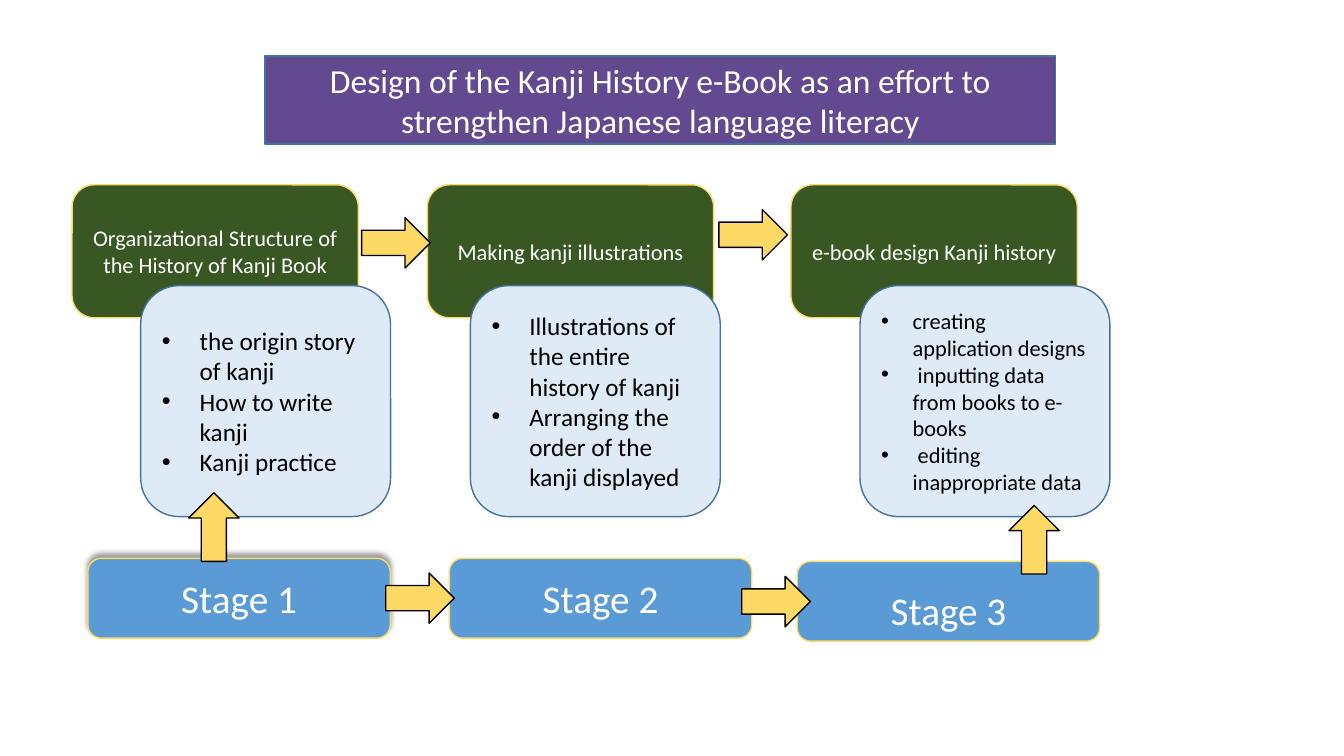
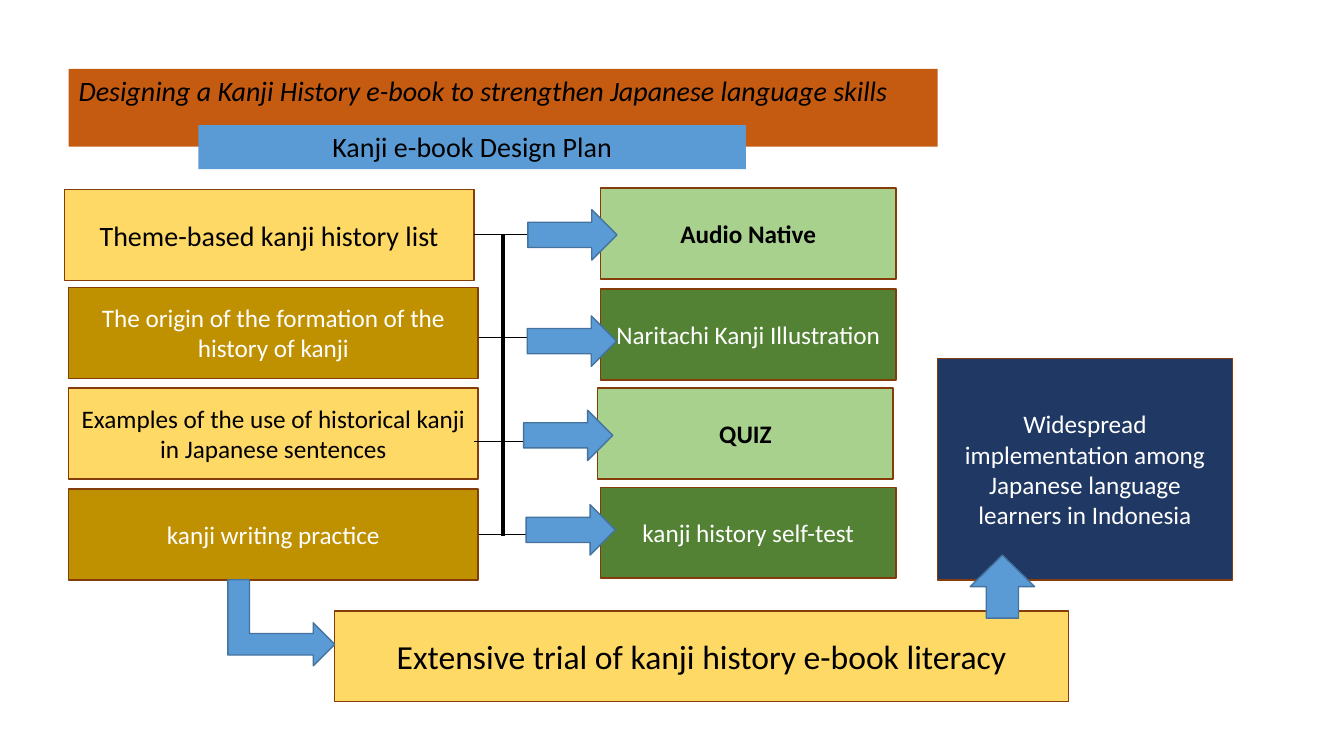
from dataclasses import dataclass
from lxml.etree import SubElement as Sub
from pptx import Presentation as Deck
from pptx.dml.color import RGBColor as RGB
from pptx.enum.shapes import MSO_CONNECTOR as Link, MSO_SHAPE as Form
from pptx.enum.text import MSO_ANCHOR as Anchor, PP_ALIGN as Align
from pptx.oxml.ns import qn
from pptx.util import Pt


@dataclass(frozen=True)
class Theme:
    font: str = "Calibri"
    # Colours
    black: str = "000000"
    white: str = "FFFFFF"
    purple: str = "634A90"
    forest: str = "385723"
    pale: str = "DEEBF7"
    blue: str = "5B9BD5"
    edge: str = "43739E"
    gold: str = "FFD966"
    amber: str = "BF9000"
    rust: str = "C55A11"
    brown: str = "843C0B"
    light: str = "A9D18E"
    green: str = "548235"
    navy: str = "203864"
    # Type sizes
    small: int = 16
    body: int = 18
    lead: int = 20
    title: int = 24
    stage: int = 28
    # Line widths
    hair: float = 0.5
    thin: float = 1
    thick: float = 3.25


T = Theme()


class Board:
    """Holds the deck, its style and the current slide."""

    def __init__(self):
        self.deck = Deck()
        self.deck.slide_width, self.deck.slide_height = Pt(960), Pt(540)
        self.slide = None

    def new(self):
        self.slide = self.deck.slides.add_slide(self.deck.slide_layouts[6])

    def shape(self, form, spot, fill, edge=None):
        item = self.slide.shapes.add_shape(form, *map(Pt, spot))
        item.shadow.inherit = False
        item.fill.solid()
        item.fill.fore_color.rgb = RGB.from_string(fill)
        if edge:
            item.line.color.rgb = RGB.from_string(edge)
            item.line.width = Pt(T.thin)
        else:
            item.line.fill.background()
        return item

    def text(self, para, words, size, tint, bold=False, slant=False):
        run = para.add_run()
        run.text = words
        font = run.font
        font.name, font.size = T.font, Pt(size)
        font.bold, font.italic = bold, slant
        font.color.rgb = RGB.from_string(tint)

    def box(self, spot, words, fill, edge=None, size=T.body, tint=T.white,
            form=Form.RECTANGLE, anchor=Anchor.MIDDLE, align=Align.CENTER, **look):
        item = self.shape(form, spot, fill, edge)
        frame = item.text_frame
        frame.word_wrap = True
        frame.vertical_anchor = anchor
        para = frame.paragraphs[0]
        para.alignment = align
        self.text(para, words, size, tint, **look)
        return item

    def notes(self, spot, lines, size, dent):
        item = self.shape(Form.ROUNDED_RECTANGLE, spot, T.pale, T.edge)
        frame = item.text_frame
        frame.word_wrap = True
        frame.vertical_anchor = Anchor.MIDDLE
        for n, line in enumerate(lines):
            para = frame.add_paragraph() if n else frame.paragraphs[0]
            para.alignment = Align.LEFT
            props = para._p.get_or_add_pPr()
            props.set("marL", str(Pt(dent)))
            props.set("indent", str(-Pt(dent)))
            Sub(props, qn("a:buFont"), typeface="Arial")
            Sub(props, qn("a:buChar"), char="•")
            self.text(para, line, size, T.black)

    def glow(self, item):
        """Casts a soft shadow upwards."""
        fx = item._element.spPr.find(qn("a:effectLst"))
        cast = Sub(fx, qn("a:outerShdw"), blurRad=str(Pt(4)), dist=str(Pt(3)),
                   dir="16200000", rotWithShape="0")
        tone = Sub(cast, qn("a:srgbClr"), val=T.black)
        Sub(tone, qn("a:alpha"), val="40000")

    def line(self, kind, ends, width):
        item = self.slide.shapes.add_connector(kind, *map(Pt, ends))
        item.line.color.rgb = RGB.from_string(T.black)
        item.line.width = Pt(width)
        Sub(item._element.spPr, qn("a:effectLst"))


def stages(board):
    board.new()
    board.box((189.4, 40, 564.6, 63),
              "Design of the Kanji History e-Book as an effort to "
              "strengthen Japanese language literacy",
              T.purple, T.edge, T.title)

    # Topics with their notes
    topics = [
        (51.5, "Organizational Structure of the History of Kanji Book", 100.5,
         ["the origin story of kanji", "How to write kanji", "Kanji practice"],
         T.body, 27),
        (305.3, "Making kanji illustrations", 336,
         ["Illustrations of the entire history of kanji",
          "Arranging the order of the kanji displayed"], T.body, 27),
        (565, "e-book design Kanji history", 614.3,
         ["creating application designs",
          " inputting data from books to e-books",
          " editing inappropriate data"], T.small, 22.5),
    ]
    for left, head, inset, lines, size, dent in topics:
        board.box((left, 132, 204.5, 95), head, T.forest, T.gold, T.small,
                  form=Form.ROUNDED_RECTANGLE)
        board.notes((inset, 204, 178.5, 165), lines, size, dent)

    # Stages
    bars = [board.box((left, top, 216, 57), f"Stage {n}", T.blue, T.gold,
                      T.stage, form=Form.ROUNDED_RECTANGLE)
            for n, (left, top) in enumerate(
                [(62.8, 398.8), (321, 398.8), (569.5, 401)], 1)]
    board.glow(bars[0])
    bars[2].text_frame.margin_top = Pt(16)

    # Arrows
    for left, top in [(258.3, 155.5), (513.5, 149.7), (275.5, 409.3), (529.8, 411.7)]:
        board.shape(Form.RIGHT_ARROW, (left, top, 49, 36), T.gold, T.black)
    for left, top in [(134.8, 352), (720.7, 361)]:
        board.shape(Form.UP_ARROW, (left, top, 36, 49), T.gold, T.black)


def plan(board):
    board.new()
    # Headings
    board.box((49, 49.3, 620.7, 55.5),
              "Designing a Kanji History e-book to strengthen Japanese language skills",
              T.rust, size=T.lead, tint=T.black, anchor=Anchor.TOP,
              align=Align.LEFT, slant=True)
    board.box((141.8, 89.3, 391, 31.5), "Kanji e-book Design Plan", T.blue,
              size=T.lead, tint=T.black, anchor=Anchor.TOP)

    # Steps: left box, right box, link, arrow
    steps = [
        ("Theme-based kanji history list", (46, 135.2), T.lead,
         "Audio Native", (429, 134.3), (338.5, 167.7, 429), (377, 149.8)),
        ("The origin of the formation of the history of kanji", (49, 205.2), T.body,
         "Naritachi Kanji Illustration", (429, 206.5), (342, 241.2, 429), (376.6, 225.7)),
        ("Examples of the use of historical kanji in Japanese sentences",
         (49, 277.2), T.body,
         "QUIZ", (427, 277.2), (338.5, 315.4, 426.5), (374, 293)),
        ("kanji writing practice", (49, 349.2), T.body,
         "kanji history self-test", (429, 348), (342, 381.7, 429), (375.8, 360.5)),
    ]
    for n, (task, left, size, part, right, link, arrow) in enumerate(steps):
        odd = n % 2
        tint = T.white if odd else T.black
        board.box((*left, 292.5, 65), task, T.amber if odd else T.gold,
                  T.brown, size, tint)
        board.box((*right, 211, 65), part, T.green if odd else T.light,
                  T.brown, tint=tint, bold=not odd)
        start, level, end = link
        board.line(Link.ELBOW, (start, level, end, level - 0.7), T.hair)
        board.shape(Form.RIGHT_ARROW, (*arrow, 63.7, 36), T.blue, T.edge)
    board.line(Link.STRAIGHT, (359.3, 167.3, 359.3, 382.8), T.thick)

    # Trial and rollout
    board.box((669.5, 256, 211, 158.3),
              "Widespread implementation among Japanese language learners in Indonesia",
              T.navy, T.brown)
    board.box((238.8, 436.3, 524.7, 65),
              "Extensive trial of kanji history e-book literacy",
              T.gold, T.brown, T.title, T.black)
    board.shape(Form.UP_ARROW, (693, 396.5, 46, 45), T.blue, T.edge)
    bend = board.shape(Form.BENT_UP_ARROW, (170.2, 406.7, 61.5, 76.3), T.blue, T.edge)
    bend.rotation = 90


def main():
    board = Board()
    stages(board)
    plan(board)
    board.deck.save("out.pptx")


if __name__ == "__main__":
    main()
